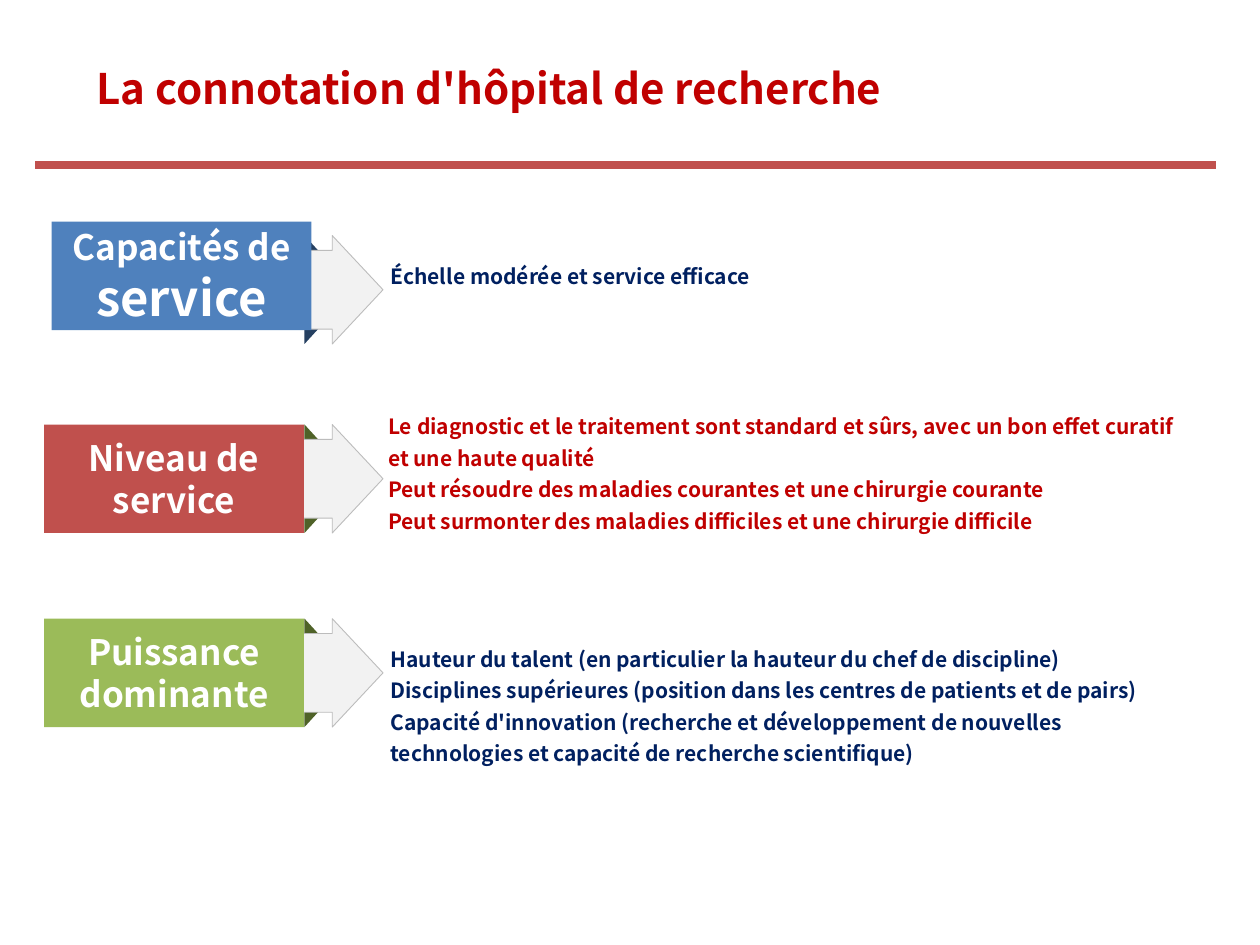
from lxml import etree
from pptx import Presentation
from pptx.dml.color import RGBColor
from pptx.enum.shapes import MSO_CONNECTOR, MSO_SHAPE as Preset
from pptx.enum.text import MSO_ANCHOR as Anchor, PP_ALIGN as Align
from pptx.oxml.ns import qn
from pptx.util import Pt

FONT = "Noto Sans CJK SC"
COLORS = {
    "title": "C00000", "brick": "C0504D", "blue": "4F81BD", "green": "9BBB59",
    "blue fold": "254061", "green fold": "4F6228", "navy": "002060",
    "arrow": "F2F2F2", "arrow edge": "BCBCBC", "white": "FFFFFF",
}
TITLE = "La connotation d'hôpital de recherche"

# Boxes are (left, top, width, height) in points; label runs are (text, size).
ROWS = [
    {"label": [("Capacités de ", 20), ("service", 28)],
     "label_at": (29.5, 126.7), "arrow_top": 134.6,
     "fill": "blue", "fold": "blue fold", "color": "navy",
     "box": (223.2, 122.4, 457.9, 70.6), "align": Align.LEFT, "spacing": None,
     "details": ["Échelle modérée et service efficace"]},
    {"label": [("Niveau de service", 20)],
     "label_at": (25.2, 242.6), "arrow_top": 242.6,
     "fill": "brick", "fold": "green fold", "color": "title",
     "box": (221.8, 226.8, 449.3, 84.1), "align": Align.JUSTIFY, "spacing": 1.25,
     "details": ["Le diagnostic et le traitement sont standard et sûrs, avec un bon effet "
                 "curatif et une haute qualité",
                 "Peut résoudre des maladies courantes et une chirurgie courante",
                 "Peut surmonter des maladies difficiles et une chirurgie difficile"]},
    {"label": [("Puissance dominante", 20)],
     "label_at": (25.2, 353.5), "arrow_top": 353.5,
     "fill": "green", "fold": "green fold", "color": "navy",
     "box": (223.2, 352.1, 457.9, 99.4), "align": Align.LEFT, "spacing": 1.25,
     "details": ["Hauteur du talent (en particulier la hauteur du chef de discipline)",
                 "Disciplines supérieures (position dans les centres de patients et de pairs)",
                 "Capacité d'innovation (recherche et développement de nouvelles "
                 "technologies et capacité de recherche scientifique)"]},
]
LABEL_W, ROW_H = 148.5, 62
ARROW_LEFT, ARROW_W = 108, 110.9
FOLD_LEFT, FOLD_W, FOLD_H = 174, 8.6, 9.4


def rgb(name):
    return RGBColor.from_string(COLORS[name])


def style(font, size, color):
    font.name, font.size, font.bold = FONT, Pt(size), True
    font.color.rgb = rgb(color)


def add_preset(slide, preset, box, fill, edge=None):
    shape = slide.shapes.add_shape(preset, *map(Pt, box))
    shape.shadow.inherit = False
    shape.fill.solid()
    shape.fill.fore_color.rgb = rgb(fill)
    if edge:
        shape.line.color.rgb = rgb(edge)
        shape.line.width = Pt(0.5)
    else:
        shape.line.fill.background()
    return shape


def add_text(slide, box, lines, size, color):
    frame = slide.shapes.add_textbox(*map(Pt, box)).text_frame
    frame.word_wrap = True
    frame.text = "\n".join(lines)
    for paragraph in frame.paragraphs:
        style(paragraph.font, size, color)
    return frame


def add_rule(slide):
    rule = slide.shapes.add_connector(
        MSO_CONNECTOR.STRAIGHT, Pt(20.2), Pt(94.3), Pt(694.8), Pt(94.3))
    rule.line.color.rgb = rgb("brick")
    rule.line.width = Pt(4.5)
    etree.SubElement(rule._element.spPr, qn("a:effectLst"))


def add_ribbon(slide, row):
    """Draw the two folds, the arrow and the label in front of them."""
    top = row["arrow_top"]
    bottom_fold, _ = [
        add_preset(slide, Preset.RIGHT_TRIANGLE, (FOLD_LEFT, y, FOLD_W, FOLD_H), row["fold"])
        for y in (top + ROW_H - FOLD_H, top)]
    bottom_fold._element.spPr.find(qn("a:xfrm")).set("flipV", "1")

    arrow = add_preset(slide, Preset.RIGHT_ARROW, (ARROW_LEFT, top, ARROW_W, ROW_H),
                       "arrow", "arrow edge")
    arrow.adjustments[0], arrow.adjustments[1] = 0.726, 0.468

    label = add_preset(slide, Preset.RECTANGLE, (*row["label_at"], LABEL_W, ROW_H), row["fill"])
    frame = label.text_frame
    frame.word_wrap = True
    frame.vertical_anchor = Anchor.MIDDLE
    paragraph = frame.paragraphs[0]
    paragraph.alignment = Align.CENTER
    for text, size in row["label"]:
        run = paragraph.add_run()
        run.text = text
        style(run.font, size, "white")


def add_details(slide, row):
    frame = add_text(slide, row["box"], row["details"], 12, row["color"])
    frame.vertical_anchor = Anchor.MIDDLE
    frame.margin_left = frame.margin_right = frame.margin_top = frame.margin_bottom = 0
    for paragraph in frame.paragraphs:
        paragraph.alignment = row["align"]
        paragraph.line_spacing = row["spacing"]


def main():
    deck = Presentation()
    deck.slide_width, deck.slide_height = Pt(720), Pt(540)
    slide = deck.slides.add_slide(deck.slide_layouts[6])
    add_rule(slide)
    add_text(slide, (48.2, 32.4, 516.2, 43.9), [TITLE], 24, "title")
    for row in ROWS:
        add_ribbon(slide, row)
        add_details(slide, row)
    deck.save("out.pptx")


if __name__ == "__main__":
    main()
